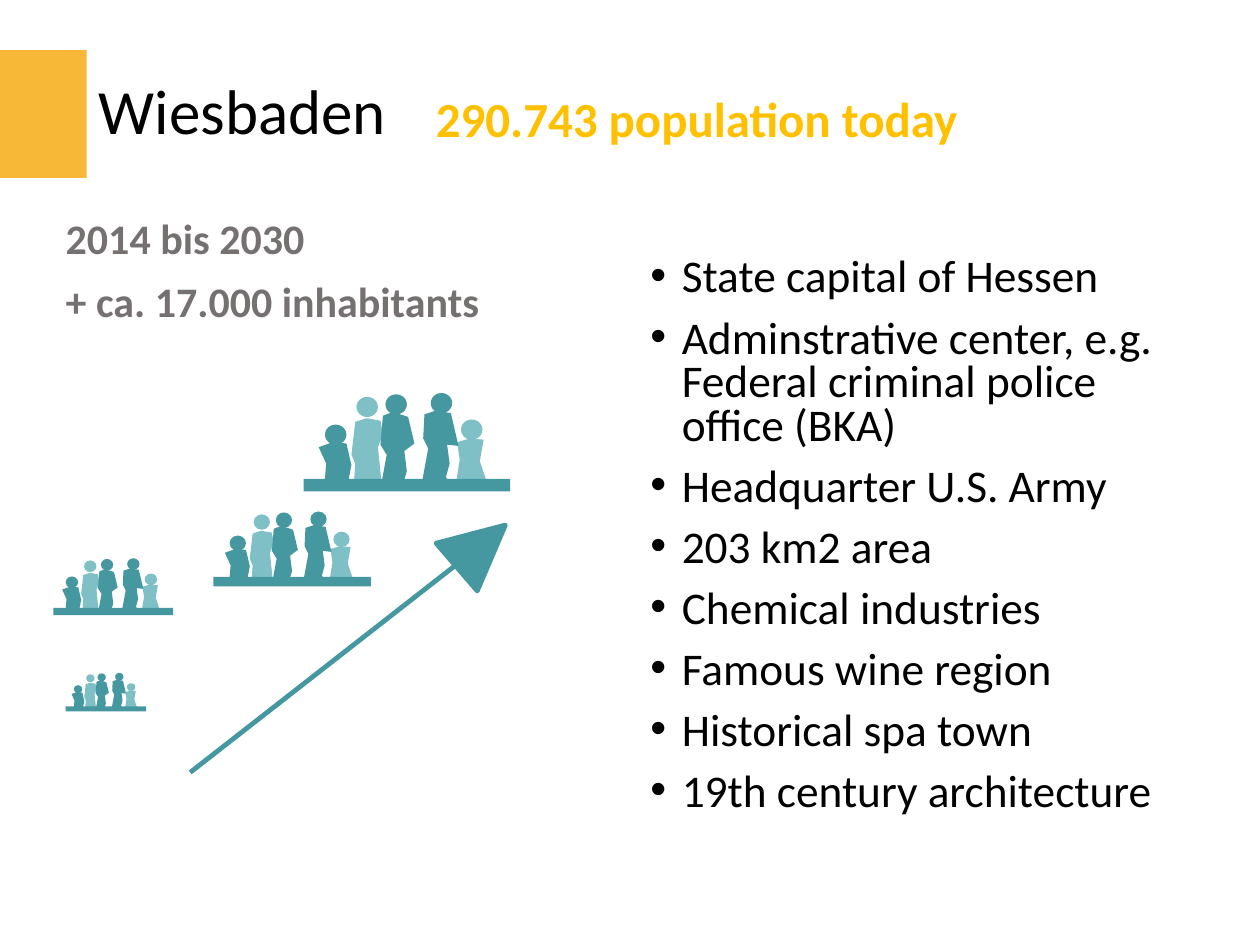
import pptx
import pptx.util
import pptx.dml.color
import pptx.enum.shapes
import pptx.enum.text
import pptx.oxml.ns
from lxml import etree

Pt = pptx.util.Pt
RGBColor = pptx.dml.color.RGBColor
Shape = pptx.enum.shapes.MSO_SHAPE
Anchor = pptx.enum.text.MSO_ANCHOR
qn = pptx.oxml.ns.qn

ORANGE = RGBColor(0xF8, 0xB8, 0x37)
GOLD = RGBColor(0xFF, 0xC0, 0x00)
TEAL = RGBColor(0x45, 0x97, 0xA0)
LIGHT_TEAL = RGBColor(0x7F, 0xC0, 0xC7)
GREY = RGBColor(0x76, 0x71, 0x71)
BLACK = RGBColor(0, 0, 0)
WHITE = RGBColor(0xFF, 0xFF, 0xFF)

FACTS = [
    "State capital of Hessen",
    "Adminstrative center, e.g. Federal criminal police office (BKA)",
    "Headquarter U.S. Army",
    "203 km2 area",
    "Chemical industries",
    "Famous wine region",
    "Historical spa town",
    "19th century architecture",
]

# A family on a 164 x 78 grid: colour, head corner, body outline
GRID = (164, 78)
HEAD = (17, 16)
GROUND = (0, 68, 164, 10)
FAMILY = [
    (LIGHT_TEAL, (125, 21), [(129, 72), (121, 72), (124, 53), (122, 39), (132, 36),
                             (143, 37), (140, 54), (145, 69), (147, 72)]),
    (LIGHT_TEAL, (42, 3), [(40, 72), (41, 56), (38, 49), (41, 23), (50, 20),
                           (61, 22), (63, 33), (59, 43), (62, 72)]),
    (TEAL, (65, 1), [(61, 76), (66, 49), (61, 41), (63, 18), (71, 15), (83, 19),
                     (88, 40), (80, 46), (82, 62), (79, 72), (83, 75), (82, 77)]),
    (TEAL, (101, 0), [(94, 71), (99, 44), (95, 36), (96, 17), (105, 14), (117, 16),
                      (123, 42), (114, 41), (116, 56), (113, 67), (116, 70), (116, 72)]),
    (TEAL, (17, 25), [(19, 76), (17, 68), (18, 56), (12, 43), (23, 39),
                      (34, 40), (38, 57), (35, 73), (37, 75)]),
]
# Boxes of the growing families, smallest first
FAMILY_BOXES = [
    (37.5, 384.5, 46, 22),
    (30.5, 319, 68.5, 32.5),
    (121.9, 292.3, 90, 42.8),
    (173.5, 224.6, 118, 56.2),
]


def paint(shape, color):
    shape.shadow.inherit = False
    shape.fill.solid()
    shape.fill.fore_color.rgb = color
    shape.line.fill.background()


def add_block(shapes, kind, box, color):
    shape = shapes.add_shape(kind, *map(Pt, box))
    paint(shape, color)
    return shape


def add_bullet(para):
    properties = para._p.get_or_add_pPr()
    properties.set("marL", str(Pt(18)))
    properties.set("indent", str(-Pt(18)))
    etree.SubElement(properties, qn("a:buFont"), typeface="Arial")
    etree.SubElement(properties, qn("a:buChar"), char="•")


def add_text(page, box, lines, size, color, bold=False, spacing=1.0,
             gap=0, anchor=Anchor.TOP, bullets=False):
    text_box = page.shapes.add_textbox(*map(Pt, box))
    frame = text_box.text_frame
    frame.word_wrap = True
    frame.vertical_anchor = anchor
    for index, line in enumerate(lines):
        para = frame.add_paragraph() if index else frame.paragraphs[0]
        para.text = line
        if bullets:
            add_bullet(para)
        para.line_spacing = spacing
        para.space_before = Pt(gap if index else 0)
        para.font.name = "Calibri"
        para.font.size = Pt(size)
        para.font.bold = bold
        para.font.color.rgb = color
    return text_box


def add_header(page, box):
    left, top, width, height = box
    marker = add_block(page.shapes, Shape.RECTANGLE, (left, top, 49.5, height), ORANGE)
    marker.line.color.rgb = ORANGE
    marker.line.width = Pt(1)
    title = add_text(page, (left + 49.5, top, 443, height), ["Wiesbaden"], 36, BLACK,
                     spacing=0.9, anchor=Anchor.MIDDLE)
    title.fill.solid()
    title.fill.fore_color.rgb = WHITE
    add_text(page, (left + 242, top - 2, width - 242, 60.5), ["290.743 population today"],
             28, GOLD, bold=True, anchor=Anchor.BOTTOM)


def add_family(page, box):
    left, top, width, height = box
    scale_x, scale_y = width / GRID[0], height / GRID[1]
    group = page.shapes.add_group_shape()

    def place(x, y):
        return Pt(left + x * scale_x), Pt(top + y * scale_y)

    def scaled(x, y, wide, high):
        return left + x * scale_x, top + y * scale_y, wide * scale_x, high * scale_y

    for color, head, outline in FAMILY:
        points = [place(*point) for point in outline]
        builder = group.shapes.build_freeform(*points[0])
        builder.add_line_segments(points[1:], close=True)
        paint(builder.convert_to_shape(), color)
        add_block(group.shapes, Shape.OVAL, scaled(*head, *HEAD), color)
    add_block(group.shapes, Shape.RECTANGLE, scaled(*GROUND), TEAL)


def add_growth_arrow(page, box):
    left, top, width, height = box
    group = page.shapes.add_group_shape()
    # Large arrow tip
    tip = add_block(group.shapes, Shape.ISOSCELES_TRIANGLE,
                    (left + width - 16, top - 19.5, 36, 36.7), TEAL)
    tip.rotation = 49.2
    tip.line.color.rgb = TEAL
    tip.line.width = Pt(2.75)
    # Shaft, running down from the tip
    shaft = group.shapes.add_connector(
        pptx.enum.shapes.MSO_CONNECTOR.STRAIGHT,
        Pt(left + width), Pt(top), Pt(left), Pt(top + height))
    shaft.line.color.rgb = TEAL
    shaft.line.width = Pt(2.75)
    etree.SubElement(shaft.line._get_or_add_ln(), qn("a:headEnd"), type="triangle")
    etree.SubElement(shaft._element.spPr, qn("a:effectLst"))


def main():
    deck = pptx.Presentation()
    deck.slide_width, deck.slide_height = Pt(720), Pt(540)
    page = deck.slides.add_slide(deck.slide_layouts[6])

    add_header(page, (0, 29, 624, 72.5))
    # Facts about the city
    add_text(page, (364.5, 144, 306, 343), FACTS, 25.9, BLACK,
             spacing=0.8, gap=10, bullets=True)
    # Growth forecast
    for box in FAMILY_BOXES:
        add_family(page, box)
    add_text(page, (30.5, 121, 330, 72), ["2014 bis 2030", "+ ca. 17.000 inhabitants"],
             24, GREY, bold=True, spacing=0.9, gap=10)
    add_growth_arrow(page, (108.7, 313.2, 164.2, 128.2))
    deck.save("out.pptx")


if __name__ == "__main__":
    main()
